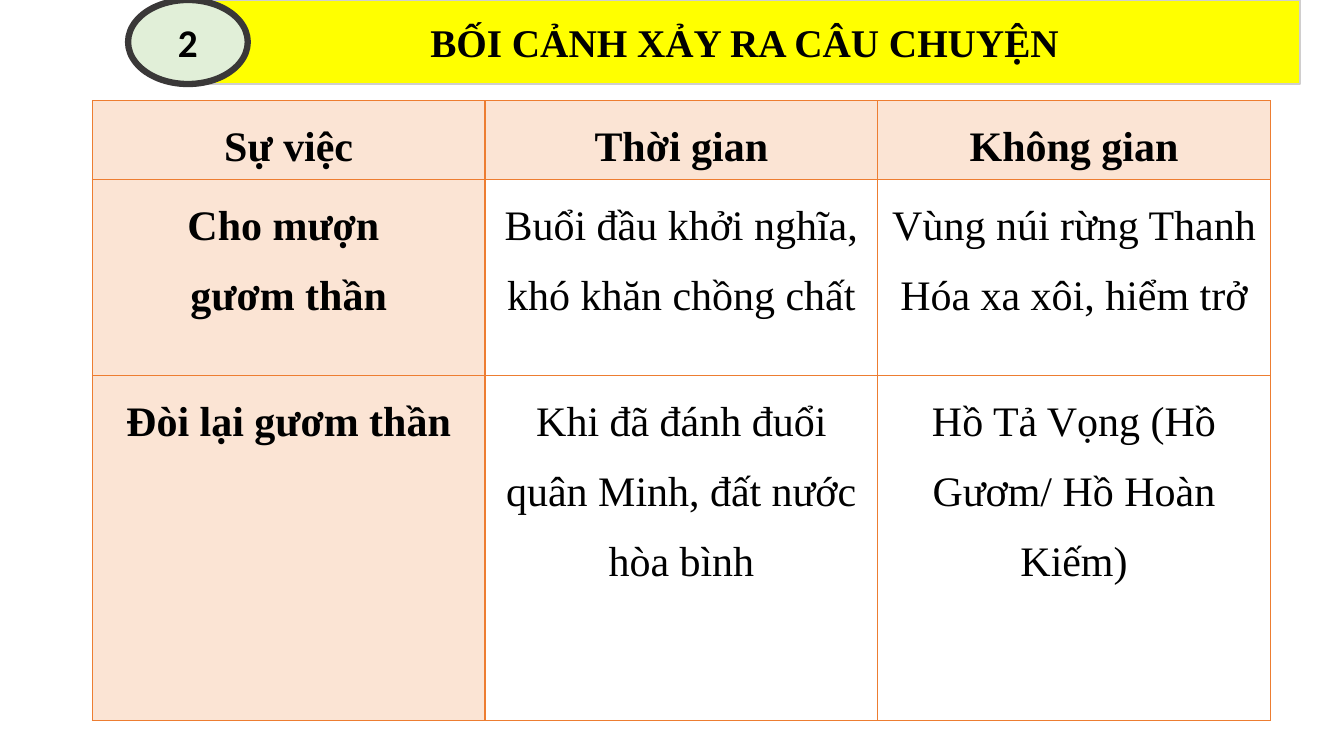
from lxml.etree import SubElement
from pptx import Presentation
from pptx.dml.color import RGBColor
from pptx.enum.shapes import MSO_SHAPE
from pptx.enum.text import MSO_ANCHOR, PP_ALIGN
from pptx.oxml.ns import qn
from pptx.util import Pt

EMU_PER_PX = 9525
SERIF = "Times New Roman"
PEACH, WHITE, ORANGE = "FBE4D4", "FFFFFF", "ED7D31"

EVENTS = [
    ["Sự việc", "Thời gian", "Không gian"],
    ["Cho mượn \ngươm thần",
     "Buổi đầu khởi nghĩa, khó khăn chồng chất",
     "Vùng núi rừng Thanh Hóa xa xôi, hiểm trở"],
    ["Đòi lại gươm thần",
     "Khi đã đánh đuổi quân Minh, đất nước hòa bình",
     "Hồ Tả Vọng (Hồ Gươm/ Hồ Hoàn Kiếm)"],
]


def px(length):
    return length * EMU_PER_PX


def color(code):
    return RGBColor.from_string(code)


def paint(target, code):
    target.fill.solid()
    target.fill.fore_color.rgb = color(code)


def write(frame, text, size, font=SERIF, bold=True, spacing=None):
    """Fill a text frame with centred paragraphs, one per line of text."""
    frame.word_wrap = True
    for index, line in enumerate(text.split("\n")):
        para = frame.add_paragraph() if index else frame.paragraphs[0]
        para.alignment = PP_ALIGN.CENTER
        para.line_spacing = spacing
        span = para.add_run()
        span.text = line
        span.font.name = font
        span.font.size = Pt(size)
        span.font.bold = bold
        span.font.color.rgb = color("000000")


def add_borders(cell, code, width):
    properties = cell._tc.get_or_add_tcPr()
    for index, side in enumerate(("lnL", "lnR", "lnT", "lnB")):
        line = SubElement(properties, qn(f"a:{side}"), w=str(Pt(width)))
        properties.insert(index, line)
        fill = SubElement(line, qn("a:solidFill"))
        SubElement(fill, qn("a:srgbClr"), val=code)


class LessonSlide:
    def __init__(self, deck):
        self.page = deck.slides.add_slide(deck.slide_layouts[6])

    def shape(self, kind, left, top, width, height, text, fill, line, weight, font=SERIF):
        box = self.page.shapes.add_shape(kind, px(left), px(top), px(width), px(height))
        box.shadow.inherit = False
        paint(box, fill)
        box.line.color.rgb = color(line)
        box.line.width = Pt(weight)
        box.text_frame.vertical_anchor = MSO_ANCHOR.MIDDLE
        write(box.text_frame, text, 28, font)

    def table(self, left, top, column_width, row_heights, rows):
        """Add a table whose first row and first column are headings."""
        columns = len(rows[0])
        table = self.page.shapes.add_table(
            len(rows), columns, px(left), px(top),
            px(column_width * columns), px(sum(row_heights))).table
        for column in table.columns:
            column.width = px(column_width)
        for r, texts in enumerate(rows):
            table.rows[r].height = px(row_heights[r])
            for c, text in enumerate(texts):
                cell = table.cell(r, c)
                heading = r == 0 or c == 0
                cell.margin_left = cell.margin_right = px(7)
                cell.margin_top = cell.margin_bottom = 0
                paint(cell, PEACH if heading else WHITE)
                add_borders(cell, ORANGE, 1)
                write(cell.text_frame, text, 30, bold=heading, spacing=1.5)


def main():
    deck = Presentation()
    deck.slide_width, deck.slide_height = px(1280), px(720)
    slide = LessonSlide(deck)
    slide.table(88, 96, 374, [75, 187, 328], EVENTS)
    slide.shape(MSO_SHAPE.RECTANGLE, 180, 0, 1058, 80,
                "BỐI CẢNH XẢY RA CÂU CHUYỆN", "FFFF00", "D0CECE", 1)
    slide.shape(MSO_SHAPE.OVAL, 122, 0, 114, 80,
                "2", "E1EFD8", "3A3838", 4.5, "Calibri")
    deck.save("out.pptx")


if __name__ == "__main__":
    main()
